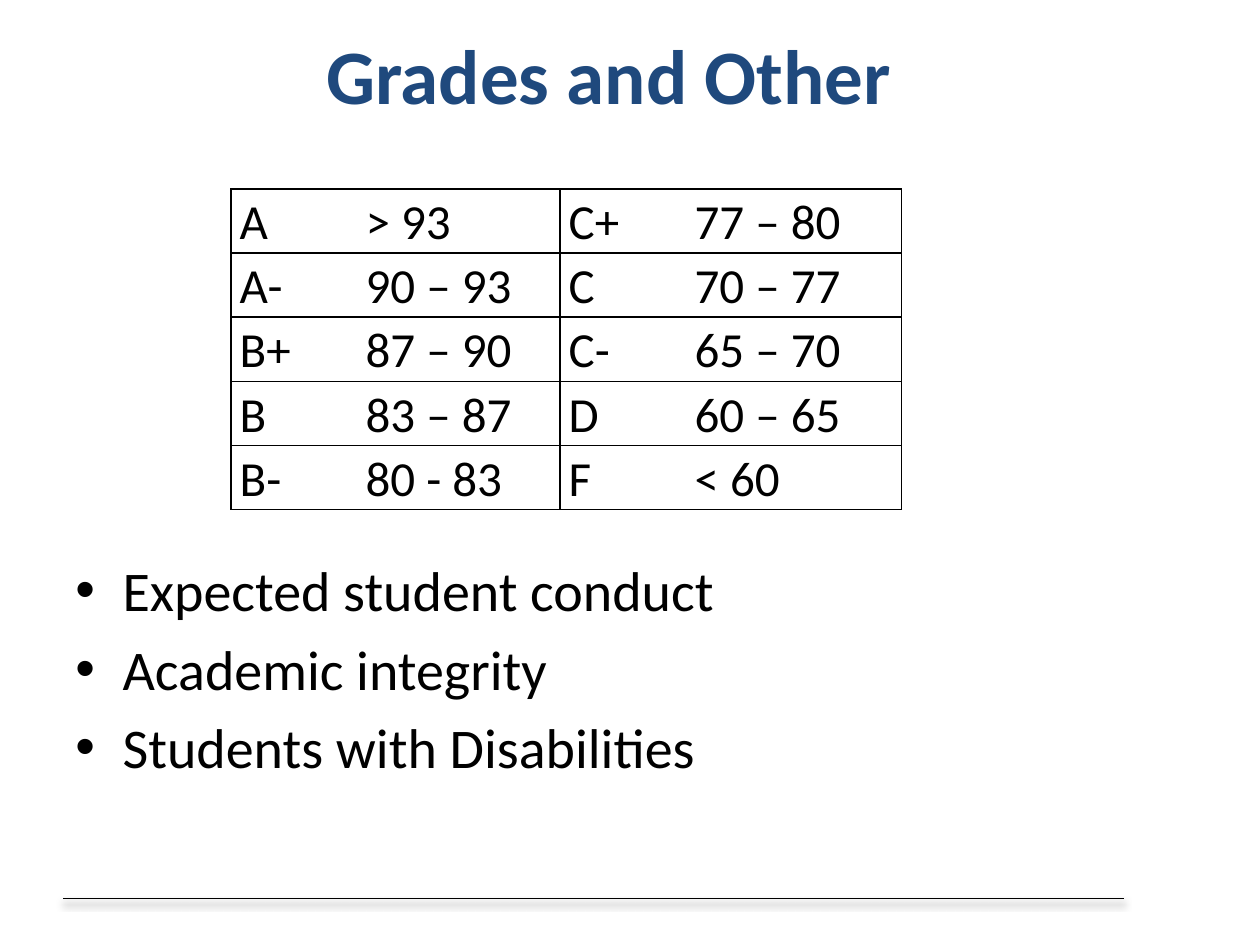
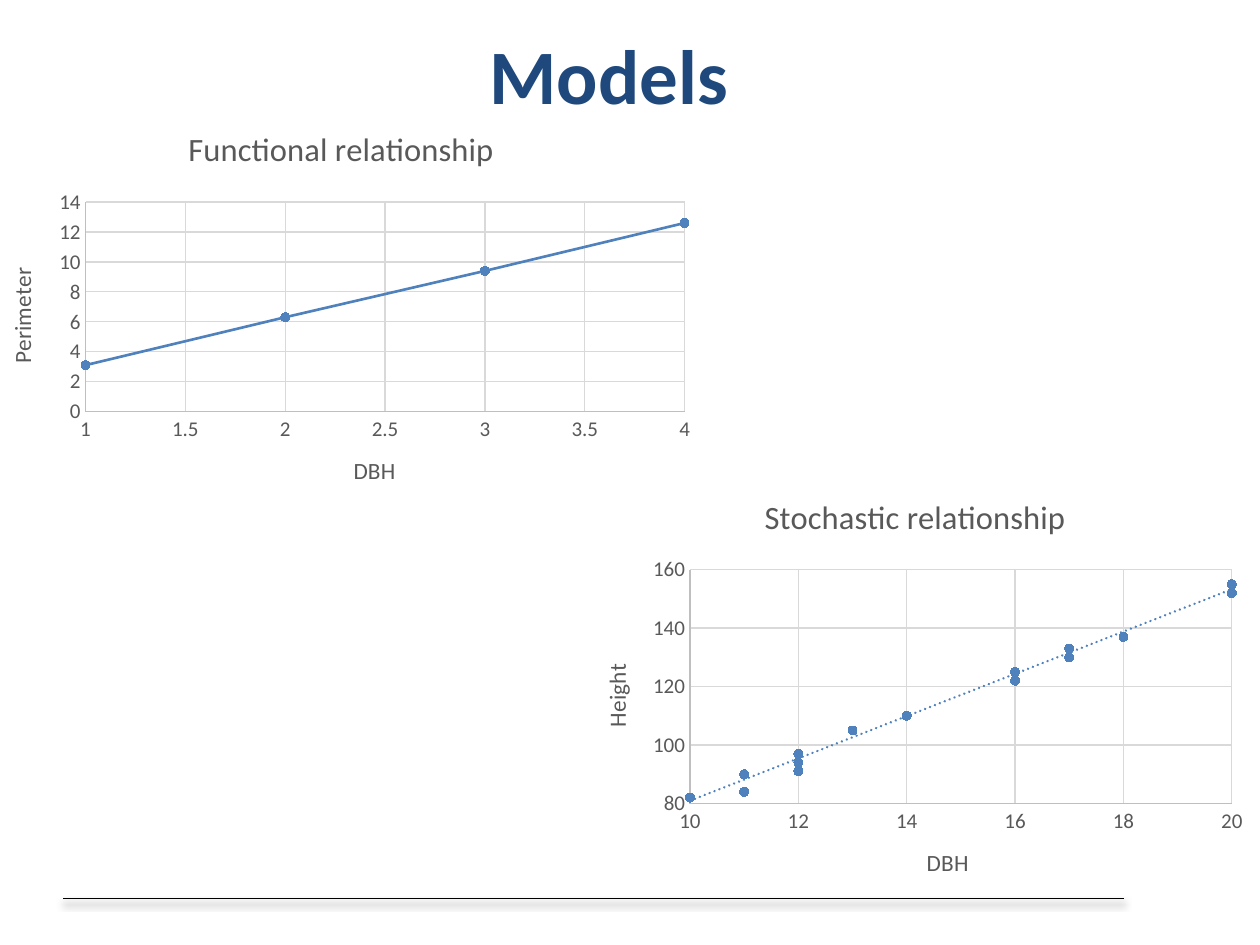
from dataclasses import dataclass

from lxml import etree
from pptx import Presentation
from pptx.chart.data import XyChartData
from pptx.dml.color import RGBColor
from pptx.enum.chart import XL_CHART_TYPE, XL_MARKER_STYLE, XL_TICK_MARK
from pptx.enum.shapes import MSO_CONNECTOR
from pptx.enum.text import MSO_ANCHOR, PP_ALIGN
from pptx.oxml import parse_xml
from pptx.oxml.ns import nsdecls, qn
from pptx.util import Pt

STRAIGHT = MSO_CONNECTOR.STRAIGHT
SCATTER = XL_CHART_TYPE.XY_SCATTER
SCATTER_SMOOTH = XL_CHART_TYPE.XY_SCATTER_SMOOTH
CIRCLE = XL_MARKER_STYLE.CIRCLE
NO_TICK = XL_TICK_MARK.NONE
MIDDLE = MSO_ANCHOR.MIDDLE
CENTER = PP_ALIGN.CENTER
TITLE_ONLY = 5


@dataclass(frozen=True)
class Theme:
    font: str = "Calibri"
    title_color: str = "1F497D"
    text_color: str = "000000"
    chart_text: str = "595959"
    axis_line: str = "BFBFBF"
    grid_line: str = "D9D9D9"
    series: str = "4F81BD"
    title_size: float = 44
    body_size: float = 32
    table_size: float = 28
    chart_title_size: float = 18.6
    axis_title_size: float = 13.3
    tick_size: float = 12


def apply(target, values):
    for name, value in values.items():
        setattr(target, name, value)


def points(*lengths):
    return [Pt(length) for length in lengths]


class Deck:
    """Holds the theme, the presentation and the current slide."""

    def __init__(self, theme):
        self.theme = theme
        self.presentation = Presentation()
        apply(self.presentation, {"slide_width": Pt(720), "slide_height": Pt(540)})
        self.slide = None

    def style_font(self, font, size, color, bold=False):
        apply(font, {"name": self.theme.font, "size": Pt(size), "bold": bold})
        font.color.rgb = RGBColor.from_string(color)

    def style_line(self, line, color, width=0.75):
        line.width = Pt(width)
        line.color.rgb = RGBColor.from_string(color)

    def new_slide(self, title):
        layout = self.presentation.slide_layouts[TITLE_ONLY]
        self.slide = self.presentation.slides.add_slide(layout)
        self.footer_line()
        shape = self.slide.shapes.title
        left, top, width, height = points(48, 12, 600, 60)
        apply(shape, {"left": left, "top": top, "width": width, "height": height})
        shape.text_frame.text = title
        shape.text_frame.vertical_anchor = MIDDLE
        paragraph = shape.text_frame.paragraphs[0]
        paragraph.alignment = CENTER
        self.style_font(paragraph.runs[0].font, self.theme.title_size,
                        self.theme.title_color, bold=True)

    def footer_line(self):
        line = self.slide.shapes.add_connector(STRAIGHT, *points(36, 513.36, 642.24, 513.36))
        self.style_line(line.line, self.theme.text_color)
        line._element.spPr.append(parse_xml(
            f'<a:effectLst {nsdecls("a")}>'
            f'<a:outerShdw blurRad="{Pt(4)}" dist="{Pt(3)}" dir="5400000" rotWithShape="0">'
            f'<a:srgbClr val="{self.theme.text_color}"><a:alpha val="40000"/></a:srgbClr>'
            '</a:outerShdw></a:effectLst>'))

    def bullets(self, box, items):
        frame = self.slide.shapes.add_textbox(*points(*box)).text_frame
        frame.word_wrap = True
        for index, item in enumerate(items):
            paragraph = frame.paragraphs[0] if index == 0 else frame.add_paragraph()
            properties = paragraph._p.get_or_add_pPr()
            properties.set("marL", str(Pt(27)))
            properties.set("indent", str(Pt(-27)))
            etree.SubElement(properties, qn("a:buFont")).set("typeface", "Arial")
            etree.SubElement(properties, qn("a:buChar")).set("char", "•")
            paragraph.space_before = Pt(6.4 if index else 0)
            run = paragraph.add_run()
            run.text = item
            self.style_font(run.font, self.theme.body_size, self.theme.text_color)

    def table(self, left, top, column_widths, row_height, rows):
        shape = self.slide.shapes.add_table(
            len(rows), len(column_widths),
            *points(left, top, sum(column_widths), row_height * len(rows)))
        table = shape.table
        apply(table, {"first_row": False, "horz_banding": False})
        for column, width in zip(table.columns, column_widths):
            column.width = Pt(width)
        for row, texts in zip(table.rows, rows):
            row.height = Pt(row_height)
            for cell, text in zip(row.cells, texts):
                self.table_cell(cell, text)

    def table_cell(self, cell, text):
        apply(cell, {"margin_left": Pt(5), "margin_right": Pt(5),
                     "margin_top": 0, "margin_bottom": 0})
        for side in ("lnL", "lnR", "lnT", "lnB"):
            cell._tc.get_or_add_tcPr().append(parse_xml(
                f'<a:{side} {nsdecls("a")} w="{Pt(1)}"><a:solidFill>'
                f'<a:srgbClr val="{self.theme.text_color}"/></a:solidFill></a:{side}>'))
        cell.fill.background()
        paragraph = cell.text_frame.paragraphs[0]
        paragraph.line_spacing = 1.07
        tabs = etree.SubElement(paragraph._p.get_or_add_pPr(), qn("a:tabLst"))
        apply_tab = etree.SubElement(tabs, qn("a:tab"))
        apply_tab.set("pos", str(Pt(72)))
        apply_tab.set("algn", "l")
        run = paragraph.add_run()
        run.text = text
        self.style_font(run.font, self.theme.table_size, self.theme.text_color)

    def chart_title(self, owner, text, size):
        """Title a chart or an axis."""
        title = owner.chart_title if hasattr(owner, "chart_title") else owner.axis_title
        title.text_frame.text = text
        run = title.text_frame.paragraphs[0].runs[0]
        self.style_font(run.font, size, self.theme.chart_text)

    def axis(self, axis, title, scale):
        low, high, step = scale
        apply(axis, {"minimum_scale": low, "maximum_scale": high, "major_unit": step,
                     "major_tick_mark": NO_TICK, "minor_tick_mark": NO_TICK,
                     "has_major_gridlines": True})
        self.style_line(axis.major_gridlines.format.line, self.theme.grid_line)
        self.style_line(axis.format.line, self.theme.axis_line)
        self.style_font(axis.tick_labels.font, self.theme.tick_size, self.theme.chart_text)
        self.chart_title(axis, title, self.theme.axis_title_size)

    def scatter(self, kind, box, title, x_axis, y_axis, values, plot_area):
        data = XyChartData()
        data_series = data.add_series("Series 1")
        for x, y in values:
            data_series.add_data_point(x, y)
        chart = self.slide.shapes.add_chart(kind, *points(*box), data).chart
        chart.has_legend = False
        self.style_font(chart.font, 10, self.theme.text_color)
        self.chart_title(chart, title, self.theme.chart_title_size)
        self.axis(chart.category_axis, *x_axis)
        self.axis(chart.value_axis, *y_axis)
        self.place_plot(chart, plot_area)

        plot = chart.plots[0]
        plot.vary_by_categories = False
        series = plot.series[0]
        color = RGBColor.from_string(self.theme.series)
        apply(series.marker, {"style": CIRCLE, "size": 5})
        series.marker.format.fill.solid()
        series.marker.format.fill.fore_color.rgb = color
        self.style_line(series.marker.format.line, self.theme.series)
        if kind == SCATTER_SMOOTH:
            self.style_line(series.format.line, self.theme.series, 1.5)
        else:
            series.format.line.fill.background()
            self.trend_line(series)

    def place_plot(self, chart, plot_area):
        element = chart._chartSpace.chart.plotArea
        for old_layout in element.findall(qn("c:layout")):
            element.remove(old_layout)
        places = "".join(f'<c:{name} val="{value}"/>' for name, value in zip("xywh", plot_area))
        element.insert(0, parse_xml(
            f'<c:layout {nsdecls("c")}><c:manualLayout><c:layoutTarget val="inner"/>'
            f'<c:xMode val="edge"/><c:yMode val="edge"/>{places}'
            '</c:manualLayout></c:layout>'))

    def trend_line(self, series):
        series._element.find(qn("c:xVal")).addprevious(parse_xml(
            f'<c:trendline {nsdecls("c", "a")}><c:spPr><a:ln w="{Pt(1.5)}" cap="rnd">'
            f'<a:solidFill><a:srgbClr val="{self.theme.series}"/></a:solidFill>'
            '<a:prstDash val="sysDot"/></a:ln></c:spPr><c:trendlineType val="linear"/>'
            '<c:dispRSqr val="0"/><c:dispEq val="0"/></c:trendline>'))


def grades_slide(deck):
    deck.new_slide("Grades and Other")
    deck.table(132, 108, (188, 195), 36.6, [
        ("A\t> 93", "C+\t77 – 80"),
        ("A-\t90 – 93", "C\t70 – 77"),
        ("B+\t87 – 90", "C-\t65 – 70"),
        ("B\t83 – 87", "D\t60 – 65"),
        ("B-\t80 - 83", "F\t< 60"),
    ])
    deck.bullets((36, 314, 648, 157), [
        "Expected student conduct", "Academic integrity", "Students with Disabilities"])


def models_slide(deck):
    deck.new_slide("Models")
    # Perimeter follows exactly from the diameter
    deck.scatter(SCATTER_SMOOTH, (-12, 60.5, 414, 233), "Functional relationship",
                 ("DBH", (1, 4, 0.5)), ("Perimeter", (0, 14, 2)),
                 [(1, 3.1), (2, 6.3), (3, 9.4), (4, 12.6)],
                 (0.147, 0.236, 0.827, 0.514))
    # Height varies around a trend
    diameters = [10, 12, 14, 16, 18, 20, 20, 17, 12, 12, 11, 17,
                 11, 11, 13, 16, 12, 20, 17, 16, 12, 20, 12, 16]
    heights = [82, 97, 110, 122, 137, 152, 155, 133, 97, 94, 90, 130,
               84, 90, 105, 125, 94, 155, 133, 125, 91, 152, 97, 125]
    deck.scatter(SCATTER, (328, 270, 390, 248), "Stochastic relationship",
                 ("DBH", (10, 20, 2)), ("Height", (80, 160, 20)),
                 list(zip(diameters, heights)),
                 (0.17, 0.224, 0.794, 0.539))


def main():
    deck = Deck(Theme())
    grades_slide(deck)
    models_slide(deck)
    deck.presentation.save("out.pptx")


if __name__ == "__main__":
    main()
